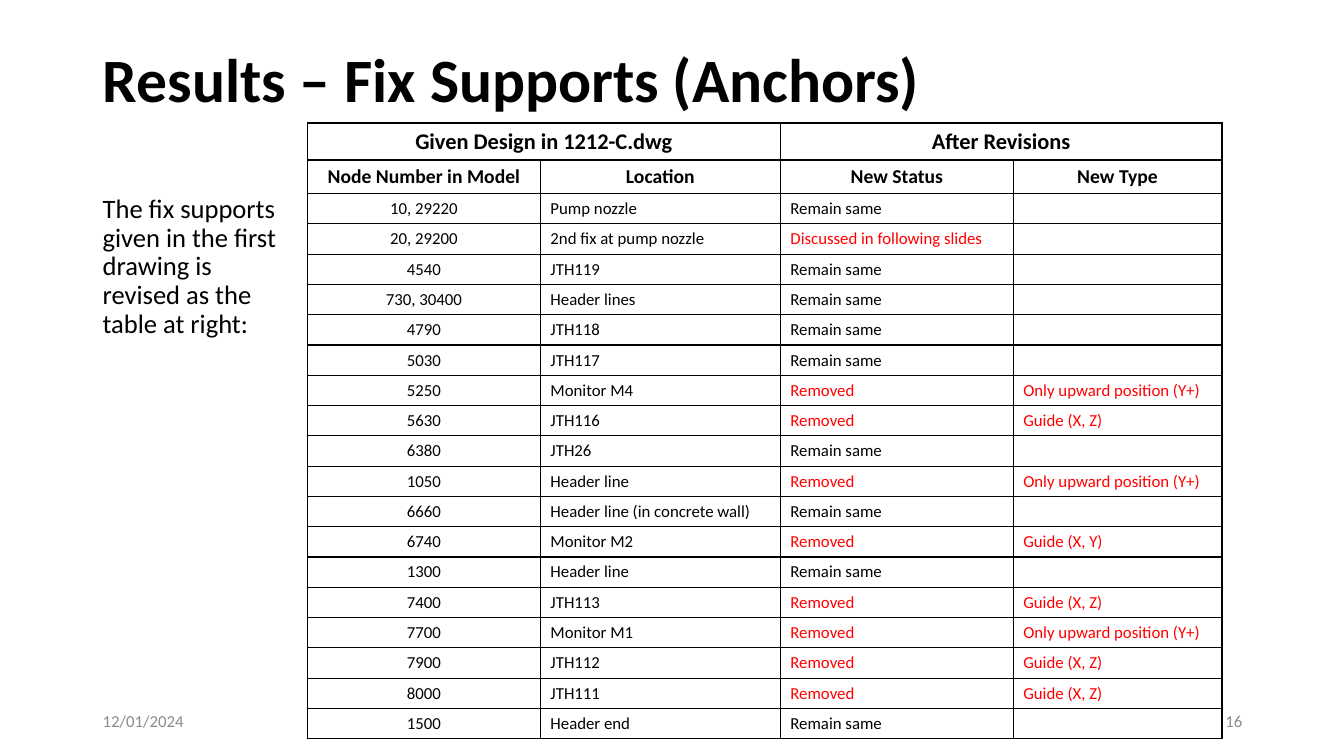
from lxml import etree
from pptx import Presentation
from pptx.dml.color import RGBColor
from pptx.enum.text import MSO_ANCHOR, PP_ALIGN
from pptx.oxml import parse_xml
from pptx.oxml.ns import nsdecls, qn
from pptx.util import Inches, Pt

LEFT, CENTER, RIGHT = PP_ALIGN.LEFT, PP_ALIGN.CENTER, PP_ALIGN.RIGHT
TOP, MIDDLE = MSO_ANCHOR.TOP, MSO_ANCHOR.MIDDLE
COLORS = {"text": "000000", "changed": "FF0000", "footer": "8C8C8C", "border": "000000"}
FONT = "Calibri"


def write_text(frame, text, size=12, color="text", bold=False, align=LEFT,
               anchor=MIDDLE, line_spacing=None, space_before=None):
    frame.word_wrap = True
    frame.vertical_anchor = anchor
    paragraph = frame.paragraphs[0]
    paragraph.alignment = align
    if line_spacing is not None:
        paragraph.line_spacing = line_spacing
    if space_before is not None:
        paragraph.space_before = Pt(space_before)
    if not text:
        # An empty cell keeps the row's text size
        etree.SubElement(paragraph._p, qn("a:endParaRPr"), sz=str(size * 100))
        return
    run = paragraph.add_run()
    run.text = text
    run.font.name = FONT
    run.font.size = Pt(size)
    run.font.bold = bold
    run.font.color.rgb = RGBColor.from_string(COLORS[color])


def format_cell(cell):
    properties = cell._tc.get_or_add_tcPr()
    for side in ("lnL", "lnR", "lnT", "lnB"):
        properties.append(parse_xml(
            f'<a:{side} {nsdecls("a")} w="12700"><a:solidFill>'
            f'<a:srgbClr val="{COLORS["border"]}"/></a:solidFill></a:{side}>'))
    cell.fill.background()


presentation = Presentation()
presentation.slide_width = Inches(13.33)
presentation.slide_height = Inches(7.5)
slide = presentation.slides.add_slide(presentation.slide_layouts[5])

# Title
title = slide.shapes.title
title.left, title.top = Inches(0.92), Inches(0.4)
title.width, title.height = Inches(11.5), Inches(0.84)
write_text(title.text_frame, "Results – Fix Supports (Anchors)", size=44, bold=True,
           line_spacing=0.9)

# Date, slide number and introduction
text_boxes = [
    ((0.92, 6.95, 3, 0.4), "12/01/2024", dict(color="footer")),
    ((9.42, 6.95, 3, 0.4), "16", dict(color="footer", align=RIGHT)),
    ((0.92, 1.89, 1.93, 1.84),
     "The fix supports given in the first drawing is revised as the table at right:",
     dict(size=19, anchor=TOP, line_spacing=0.9, space_before=10)),
]
for box, text, text_format in text_boxes:
    text_box = slide.shapes.add_textbox(*[Inches(length) for length in box])
    write_text(text_box.text_frame, text, **text_format)

# Table content
SAME, REMOVED = "Remain same", "Removed"
UPWARD, GUIDE_XZ = "Only upward position (Y+)", "Guide (X, Z)"
group_headers = ["Given Design in 1212-C.dwg", "", "After Revisions", ""]
column_headers = ["Node Number in Model", "Location", "New Status", "New Type"]
supports = [
    ("10, 29220", "Pump nozzle", SAME, ""),
    ("20, 29200", "2nd fix at pump nozzle", "Discussed in following slides", ""),
    ("4540", "JTH119", SAME, ""),
    ("730, 30400", "Header lines", SAME, ""),
    ("4790", "JTH118", SAME, ""),
    ("5030", "JTH117", SAME, ""),
    ("5250", "Monitor M4", REMOVED, UPWARD),
    ("5630", "JTH116", REMOVED, GUIDE_XZ),
    ("6380", "JTH26", SAME, ""),
    ("1050", "Header line", REMOVED, UPWARD),
    ("6660", "Header line (in concrete wall)", SAME, ""),
    ("6740", "Monitor M2", REMOVED, "Guide (X, Y)"),
    ("1300", "Header line", SAME, ""),
    ("7400", "JTH113", REMOVED, GUIDE_XZ),
    ("7700", "Monitor M1", REMOVED, UPWARD),
    ("7900", "JTH112", REMOVED, GUIDE_XZ),
    ("8000", "JTH111", REMOVED, GUIDE_XZ),
    ("1500", "Header end", SAME, ""),
]
rows = [group_headers, column_headers, *supports]
column_widths = [2.31, 2.38, 2.31, 2.07]
row_heights = [0.32, 0.29] + [0.26] * len(supports)
row_sizes = [16, 14] + [12] * len(supports)

# Table grid
table = slide.shapes.add_table(len(rows), len(column_widths), Inches(3.05), Inches(1.22),
                               Inches(sum(column_widths)), Inches(sum(row_heights))).table
table.first_row = False
table.horz_banding = False
for column, width in zip(table.columns, column_widths):
    column.width = Inches(width)
for row, height in zip(table.rows, row_heights):
    row.height = Inches(height)
for first_column in (0, 2):
    table.cell(0, first_column).merge(table.cell(0, first_column + 1))

# Table cells
for row_index, row_texts in enumerate(rows):
    is_header = row_index < 2
    for column_index, text in enumerate(row_texts):
        cell = table.cell(row_index, column_index)
        is_changed = not is_header and column_index >= 2 and text != SAME
        write_text(cell.text_frame, text, size=row_sizes[row_index], bold=is_header,
                   color="changed" if is_changed else "text",
                   align=CENTER if is_header or column_index == 0 else LEFT)
        format_cell(cell)

presentation.save("out.pptx")
